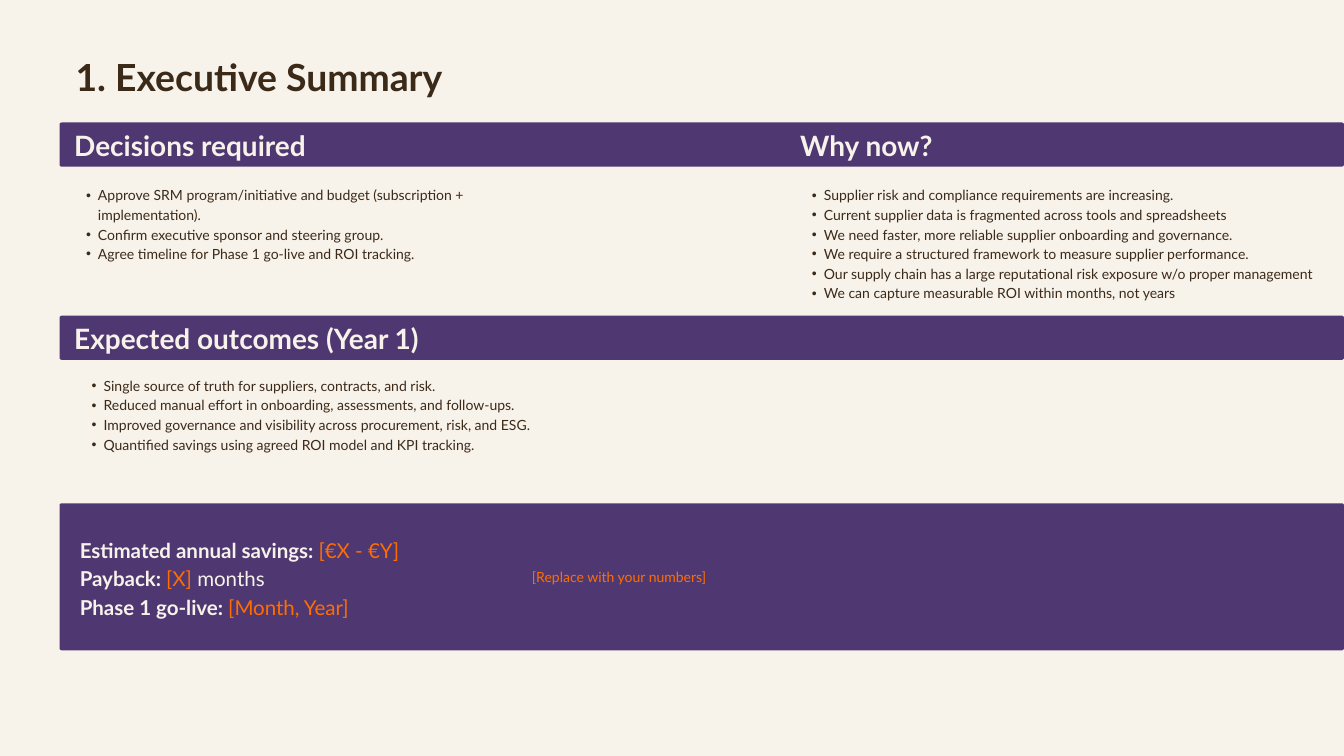
from pptx import Presentation
from pptx import util as u
from pptx.dml.color import RGBColor
from pptx.enum import shapes, text
from lxml import etree

PX = 9525  # 96 px to the inch
INK = {"cream": "F7F2EA", "plum": "4F3872", "brown": "3C2A19", "orange": "FF6D00"}
FACE = "Lato"
FRAME = {
    "margin_left": 0, "margin_top": 0, "margin_right": 0, "margin_bottom": 0,
    "word_wrap": True, "auto_size": text.MSO_AUTO_SIZE.SHAPE_TO_FIT_TEXT,
}
# Line pitch of every text is 1.4 times its size
PITCH = 1.4


class Deck:
    def __init__(self, wide, high):
        self.prs = Presentation()
        self.prs.slide_width, self.prs.slide_height = wide * PX, high * PX
        self.slide = self.prs.slides.add_slide(self.prs.slide_layouts[6])

    def color(self, name):
        return RGBColor.from_string(INK[name])

    def ground(self, name):
        fill = self.slide.background.fill
        fill.solid()
        fill.fore_color.rgb = self.color(name)

    def bar(self, top, high, left=85, wide=1835, curve=3):
        box = self.slide.shapes.add_shape(
            shapes.MSO_SHAPE.ROUNDED_RECTANGLE,
            left * PX, top * PX, wide * PX, high * PX)
        box.adjustments[0] = curve / high
        box.shadow.inherit = False
        box.fill.solid()
        box.fill.fore_color.rgb = self.color("plum")
        box.line.fill.background()

    def label(self, left, top, wide, high, size, lines, bullet=False):
        """Each line is a list of (words, color, bold) runs."""
        box = self.slide.shapes.add_textbox(left * PX, top * PX, wide * PX, high * PX)
        frame = box.text_frame
        for key, val in FRAME.items():
            setattr(frame, key, val)
        for i, runs in enumerate(lines):
            para = frame.paragraphs[0] if i == 0 else frame.add_paragraph()
            para.line_spacing = u.Pt(round(size * PITCH, 1))
            if bullet:
                self.dot(para)
            for words, ink, bold in runs:
                run = para.add_run()
                run.text = words
                form = {"name": FACE, "size": u.Pt(size), "bold": bold}
                for key, val in form.items():
                    setattr(run.font, key, val)
                run.font.color.rgb = self.color(ink)

    def dot(self, para, left=34, hang=17):
        para.level = 1
        props = para._p.get_or_add_pPr()
        props.set("marL", str(left * PX))
        props.set("indent", str(-hang * PX))
        space = props.nsmap["a"]
        etree.SubElement(props, f"{{{space}}}buFont").set("typeface", "Arial")
        etree.SubElement(props, f"{{{space}}}buChar").set("char", "•")

    def head(self, left, top, wide, words):
        self.label(left, top, wide, 55, 30, [[(words, "cream", True)]])

    def points(self, left, top, wide, items):
        lines = [[(item, "brown", False)] for item in items]
        self.label(left, top, wide, 28 * len(items), 15, lines, bullet=True)


def main():
    deck = Deck(1920, 1080)
    deck.ground("cream")

    # Title
    deck.label(108, 66, 1036, 73, 40, [[("1. Executive Summary", "brown", True)]])

    # Decisions and reasons
    deck.bar(175, 63)
    deck.head(106, 176, 444, "Decisions required")
    deck.head(1143, 176, 256, "Why now?")
    deck.points(106, 263, 624, [
        "Approve SRM program/initiative and budget (subscription + implementation).",
        "Confirm executive sponsor and steering group.",
        "Agree timeline for Phase 1 go-live and ROI tracking.",
    ])
    deck.points(1143, 263, 759, [
        "Supplier risk and compliance requirements are increasing.",
        "Current supplier data is fragmented across tools and spreadsheets",
        "We need faster, more reliable supplier onboarding and governance.",
        "We require a structured framework to measure supplier performance.",
        "Our supply chain has a large reputational risk exposure w/o proper management",
        "We can capture measurable ROI within months, not years",
    ])

    # Outcomes
    deck.bar(451, 63)
    deck.head(106, 452, 716, "Expected outcomes (Year 1)")
    deck.points(114, 535, 814, [
        "Single source of truth for suppliers, contracts, and risk.",
        "Reduced manual effort in onboarding, assessments, and follow-ups.",
        "Improved governance and visibility across procurement, risk, and ESG.",
        "Quantified savings using agreed ROI model and KPI tracking.",
    ])

    # Key figures
    deck.bar(719, 210)
    deck.label(114, 762, 1789, 123, 22, [
        [("Estimated annual savings: ", "cream", True), ("[€X - €Y]", "orange", False)],
        [("Payback: ", "cream", True), ("[X] ", "orange", False),
         ("months", "cream", False)],
        [("Phase 1 go-live: ", "cream", True), ("[Month, Year]", "orange", False)],
    ])
    deck.label(760, 808, 421, 28, 15,
               [[("[Replace with your numbers]", "orange", False)]])

    deck.prs.save("out.pptx")


if __name__ == "__main__":
    main()
